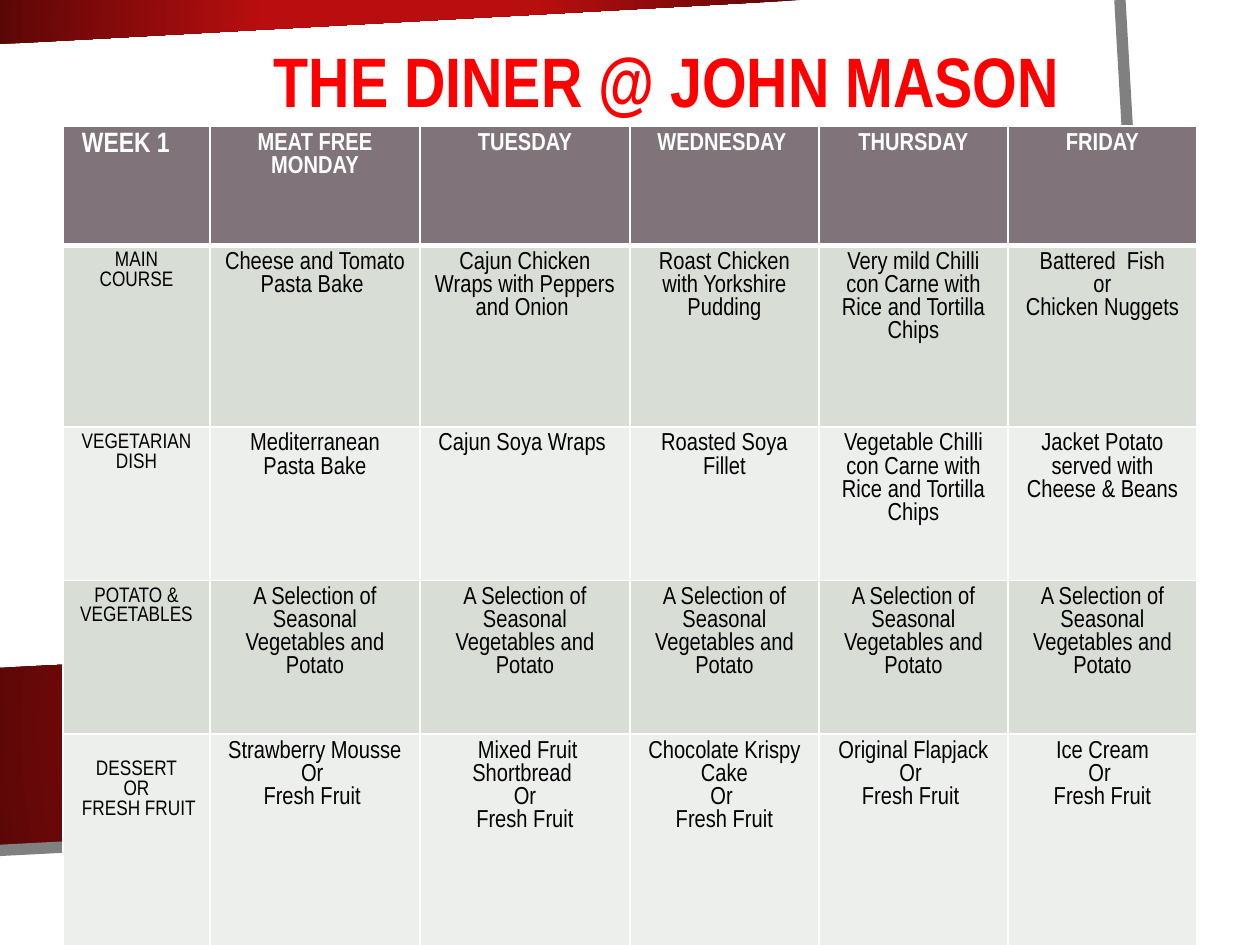
from dataclasses import dataclass

from lxml import etree
from pptx import Presentation
from pptx.dml.color import RGBColor
from pptx.enum.text import MSO_ANCHOR, PP_ALIGN
from pptx.oxml import parse_xml
from pptx.oxml.ns import nsdecls, qn
from pptx.util import Pt

CENTER, LEFT = PP_ALIGN.CENTER, PP_ALIGN.LEFT
BOTTOM = MSO_ANCHOR.BOTTOM


@dataclass(frozen=True)
class Theme:
    font: str = "Arial Narrow"
    title: str = "FF0000"
    red: str = "B80E0F"
    dark_red: str = "5C0707"
    edge: str = "808080"
    header: str = "80737A"
    bands: tuple = ("D8DED5", "ECEFEB")
    white: str = "FFFFFF"
    text: str = "000000"
    title_size: int = 40
    week_size: int = 16
    body_size: int = 14
    label_size: int = 12


T = Theme()


def add_text(p, text, size, color, bold=False, align=CENTER):
    p.alignment = align
    r = p.add_run()
    r.text = text
    r.font.name = T.font
    r.font.size = Pt(size)
    r.font.bold = bold
    r.font.color.rgb = RGBColor.from_string(color)


def add_outline(shapes, points, close):
    fb = shapes.build_freeform(Pt(points[0][0]), Pt(points[0][1]), scale=1.0)
    fb.add_line_segments([(Pt(x), Pt(y)) for x, y in points[1:]], close=close)
    sp = fb.convert_to_shape()
    sp.shadow.inherit = False
    return sp


prs = Presentation()
prs.slide_width, prs.slide_height = Pt(720), Pt(540)
s = prs.slides.add_slide(prs.slide_layouts[6])

# Red bands, glowing from the middle
BANDS = [
    [(-0.7, 381.6), (658.8, 349.9), (666, 452.2), (0, 485.3)],
    [(0, 0), (457.5, 0), (0, 25.2)],
]
for points in BANDS:
    sp = add_outline(s.shapes, points, True)
    sp.line.fill.background()
    sp.fill.gradient()
    for stop, color, position in zip(sp.fill.gradient_stops, (T.red, T.dark_red), (0.34, 1)):
        stop.color.rgb = RGBColor.from_string(color)
        stop.position = position
    grad = sp._element.spPr.find(qn("a:gradFill"))
    grad.remove(grad.find(qn("a:lin")))
    path = etree.SubElement(grad, qn("a:path"), path="circle")
    etree.SubElement(path, qn("a:fillToRect"), l="50000", t="50000", r="50000", b="50000")

# Grey page edge
sp = add_outline(s.shapes, [(640, 0), (666, 451.4), (-1.4, 486)], False)
sp.fill.background()
sp.line.color.rgb = RGBColor.from_string(T.edge)
sp.line.width = Pt(6.5)

# Title
tf = s.shapes.add_textbox(Pt(-18), Pt(25.2), Pt(797.8), Pt(48.2)).text_frame
tf.word_wrap = True
tf.vertical_anchor = BOTTOM
tf.paragraphs[0].line_spacing = 0.9
add_text(tf.paragraphs[0], "THE DINER @ JOHN MASON", T.title_size, T.title, bold=True)

# Menu: one list per row, one line per paragraph
SIDES = "A Selection of Seasonal Vegetables and Potato"
MENU = [
    [" WEEK 1", "MEAT FREE MONDAY", "TUESDAY", "WEDNESDAY ", "THURSDAY", "FRIDAY"],
    ["MAIN\nCOURSE", "Cheese and Tomato Pasta Bake ",
     "Cajun Chicken Wraps with Peppers and Onion ",
     "Roast Chicken with Yorkshire Pudding",
     "Very mild Chilli con Carne with Rice and Tortilla Chips",
     "Battered  Fish\n or \nChicken Nuggets"],
    ["VEGETARIAN DISH", "Mediterranean Pasta Bake", "Cajun Soya Wraps ",
     "Roasted Soya Fillet",
     "Vegetable Chilli con Carne with Rice and Tortilla Chips",
     "Jacket Potato served with Cheese & Beans"],
    ["POTATO & VEGETABLES"] + [SIDES] * 5,
    ["DESSERT\nOR\n FRESH FRUIT", "Strawberry Mousse\nOr \nFresh Fruit ",
     " Mixed Fruit Shortbread \nOr\nFresh Fruit",
     "Chocolate Krispy Cake\nOr \nFresh Fruit",
     "Original Flapjack\nOr \nFresh Fruit ",
     "Ice Cream\nOr \nFresh Fruit"],
]
COLS = [84, 120, 120, 108, 108, 108]
ROWS = [68.2, 103.7, 87.8, 87.8, 128.9]

table = s.shapes.add_table(len(ROWS), len(COLS), Pt(36), Pt(72),
                           Pt(sum(COLS)), Pt(sum(ROWS))).table
for col, width in zip(table.columns, COLS):
    col.width = Pt(width)
for row, height in zip(table.rows, ROWS):
    row.height = Pt(height)

for i, line in enumerate(MENU):
    header = i == 0
    for j, text in enumerate(line):
        cell = table.cell(i, j)
        cell.fill.solid()
        cell.fill.fore_color.rgb = RGBColor.from_string(
            T.header if header else T.bands[(i - 1) % 2])
        if j == 0:
            size = T.week_size if header else T.label_size
        else:
            size = T.body_size
        for k, part in enumerate(text.split("\n")):
            tf = cell.text_frame
            p = tf.paragraphs[0] if k == 0 else tf.add_paragraph()
            add_text(p, part, size, T.white if header else T.text, bold=header,
                     align=LEFT if header and j == 0 else CENTER)
        # White rules, thicker under the header
        tcPr = cell._tc.get_or_add_tcPr()
        for n, side in enumerate(("lnL", "lnR", "lnT", "lnB")):
            thick = (header and side == "lnB") or (i == 1 and side == "lnT")
            tcPr.insert(n, parse_xml(
                f'<a:{side} {nsdecls("a")} w="{Pt(3 if thick else 1)}"><a:solidFill>'
                f'<a:srgbClr val="{T.white}"/></a:solidFill></a:{side}>'))

# The dessert label starts one line lower
table.cell(4, 0).margin_top = Pt(15)

prs.save("out.pptx")
